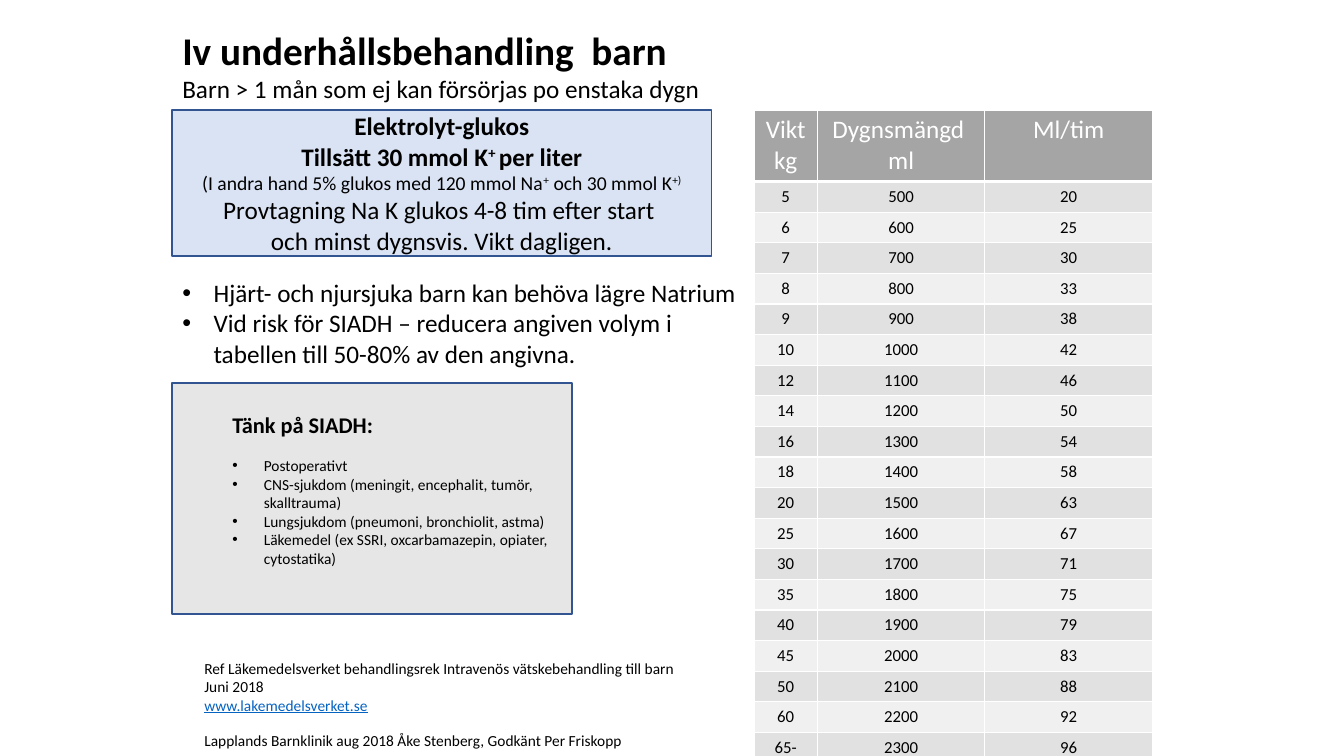
"""Builds a slide on intravenous maintenance fluids for children."""
from dataclasses import dataclass

from lxml import etree
from pptx import Presentation
from pptx import util as u
from pptx.dml.color import RGBColor
from pptx.enum import shapes, text
from pptx.oxml import ns

HUES = {
    "ink": "000000", "white": "FFFFFF", "edge": "325491", "blue": "DAE3F3",
    "grey": "E7E6E6", "link": "0563C1", "head": "A5A5A5",
    "odd": "E1E1E1", "even": "F0F0F0",
}
LEFT, TOP = 4.34, 2.77
WEIGHTS = ("5 6 7 8 9 10 12 14 16 18 20 25 30 35 40 45 50 60 65-").split()
RATES = (20, 25, 30, 33, 38, 42, 46, 50, 54, 58, 63, 67, 71, 75, 79, 83, 88, 92, 96)


@dataclass
class Box:
    """A place on the slide, in centimetres."""
    x: float
    y: float
    w: float
    h: float

    def dims(self) -> tuple:
        """Gives left, top, width and height as lengths."""
        return tuple(u.Cm(n) for n in (self.x, self.y, self.w, self.h))


@dataclass
class Line:
    """One paragraph; every second run is raised."""
    runs: tuple
    size: int = 18
    bold: bool = False
    hue: str = "ink"
    under: bool = False
    left: float = 0
    hang: float = 0
    after: float = 0


def hue(name: str) -> RGBColor:
    """Looks up a colour."""
    return RGBColor.from_string(HUES[name])


def write(frame, lines: list, align=text.PP_ALIGN.LEFT, anchor=text.MSO_ANCHOR.TOP,
          top: float = 0.13, base: float = 0.13) -> None:
    """Fills a text frame with formatted lines."""
    frame.word_wrap = True
    frame.auto_size = text.MSO_AUTO_SIZE.NONE
    frame.vertical_anchor = anchor
    frame.margin_top, frame.margin_bottom = u.Cm(top), u.Cm(base)
    for i, line in enumerate(lines):
        para = frame.add_paragraph() if i else frame.paragraphs[0]
        para.alignment = align
        para.space_before, para.space_after = u.Pt(0), u.Pt(line.after)
        props = para._p.get_or_add_pPr()
        props.set("marL", str(u.Cm(line.left)))
        props.set("indent", str(-u.Cm(line.hang)))
        if line.hang:
            font = etree.SubElement(props, ns.qn("a:buFont"))
            font.set("typeface", "Arial")
            etree.SubElement(props, ns.qn("a:buChar")).set("char", "•")
        else:
            etree.SubElement(props, ns.qn("a:buNone"))
        for j, part in enumerate(line.runs):
            run = para.add_run()
            run.text = part
            run.font.name, run.font.size = "Calibri", u.Pt(line.size)
            run.font.bold, run.font.underline = line.bold, line.under
            run.font.color.rgb = hue(line.hue)
            if j % 2:
                run.font._element.set("baseline", "30000")


def hold(slide, slot: int, box: Box, lines: list) -> None:
    """Moves and fills a placeholder."""
    shape = slide.placeholders[slot]
    shape.left, shape.top, shape.width, shape.height = box.dims()
    write(shape.text_frame, lines)


def panel(slide, box: Box, fill: str, lines: list, **form) -> None:
    """Draws a framed, filled panel with text."""
    shape = slide.shapes.add_shape(shapes.MSO_SHAPE.RECTANGLE, *box.dims())
    shape.shadow.inherit = False
    shape.fill.solid()
    shape.fill.fore_color.rgb = hue(fill)
    shape.line.color.rgb, shape.line.width = hue("edge"), u.Pt(1)
    write(shape.text_frame, lines, anchor=text.MSO_ANCHOR.MIDDLE, **form)


def note(slide, box: Box, lines: list, **form) -> None:
    """Adds a plain text box."""
    write(slide.shapes.add_textbox(*box.dims()).text_frame, lines, **form)


def paint(cell, fill: str, lines: list, foot: float = 1) -> None:
    """Formats one table cell, with white borders."""
    props = cell._tc.get_or_add_tcPr()
    for side in "LRTB":
        rule = etree.SubElement(props, ns.qn(f"a:ln{side}"))
        rule.set("w", str(u.Pt(foot if side == "B" else 1)))
        solid = etree.SubElement(rule, ns.qn("a:solidFill"))
        etree.SubElement(solid, ns.qn("a:srgbClr")).set("val", HUES["white"])
    cell.fill.solid()
    cell.fill.fore_color.rgb = hue(fill)
    write(cell.text_frame, lines, align=text.PP_ALIGN.CENTER)


def chart(slide) -> None:
    """Draws the dosing table."""
    count = len(WEIGHTS) + 1
    grid = slide.shapes.add_table(count, 3, *Box(19, TOP, 10.04, 16.26).dims()).table
    for col, wide in zip(grid.columns, (1.6, 4.22, 4.22)):
        col.width = u.Cm(wide)
    for i, row in enumerate(grid.rows):
        row.height = u.Cm(0.76 if i else 1.8)
    for i, heads in enumerate((("Vikt kg",), ("Dygnsmängd ", "ml"), ("Ml/tim",))):
        paint(grid.cell(0, i), "head", [Line((h,), hue="white") for h in heads], foot=3)
    for i, row in enumerate(zip(WEIGHTS, range(500, 2400, 100), RATES), 1):
        for j, value in enumerate(row):
            paint(grid.cell(i, j), "odd" if i % 2 else "even", [Line((str(value),), 12)])


def main() -> None:
    """Builds and saves the slide."""
    deck = Presentation()
    deck.slide_width, deck.slide_height = u.Cm(33.87), u.Cm(19.05)
    slide = deck.slides.add_slide(deck.slide_layouts[1])
    hold(slide, 0, Box(LEFT, 0.53, 13.69, 2.24), [
        Line(("Iv underhållsbehandling  barn",), 28, True),
        Line(("Barn > 1 mån som ej kan försörjas po enstaka dygn",)),
    ])
    panel(slide, Box(LEFT, TOP, 13.59, 3.68), "blue", [
        Line(("Elektrolyt-glukos",), bold=True),
        Line(("Tillsätt 30 mmol K", "+ ", "per liter"), bold=True),
        Line(("(I andra hand 5% glukos med 120 mmol Na", "+",
              " och 30 mmol K", "+)"), 14),
        Line(("Provtagning Na K glukos 4-8 tim efter start ",)),
        Line(("och minst dygnsvis. Vikt dagligen.",)),
    ], align=text.PP_ALIGN.CENTER)
    hold(slide, 1, Box(LEFT, 6.86, 14.66, 2.57), [
        Line((item,), left=0.79, hang=0.79) for item in (
            "Hjärt- och njursjuka barn kan behöva lägre Natrium",
            "Vid risk för SIADH – reducera angiven volym i "
            "tabellen till 50-80% av den angivna.")
    ])
    causes = (
        "Postoperativt",
        "CNS-sjukdom (meningit, encephalit, tumör, skalltrauma)",
        "Lungsjukdom (pneumoni, bronchiolit, astma)",
        "Läkemedel (ex SSRI, oxcarbamazepin, opiater, cytostatika)",
    )
    panel(slide, Box(LEFT, 9.65, 10.08, 5.82), "grey", [
        Line(("Tänk på SIADH:",), 16, True, left=1.27, after=13.4),
        *(Line((cause,), 11, left=2.06, hang=0.79) for cause in causes),
    ], base=0.6)
    note(slide, Box(4.9, 15.7, 13.59, 2.44), [
        Line(("Ref Läkemedelsverket behandlingsrek Intravenös "
              "vätskebehandling till barn",), 11),
        Line(("Juni 2018",), 11),
        Line(("www.lakemedelsverket.se",), 11, hue="link", under=True),
    ], top=0.9)
    chart(slide)
    note(slide, Box(4.9, 18.29, 12.37, 0.74), [
        Line(("Lapplands Barnklinik aug 2018 Åke Stenberg, Godkänt Per Friskopp",), 11),
    ])
    deck.save("out.pptx")


if __name__ == "__main__":
    main()
